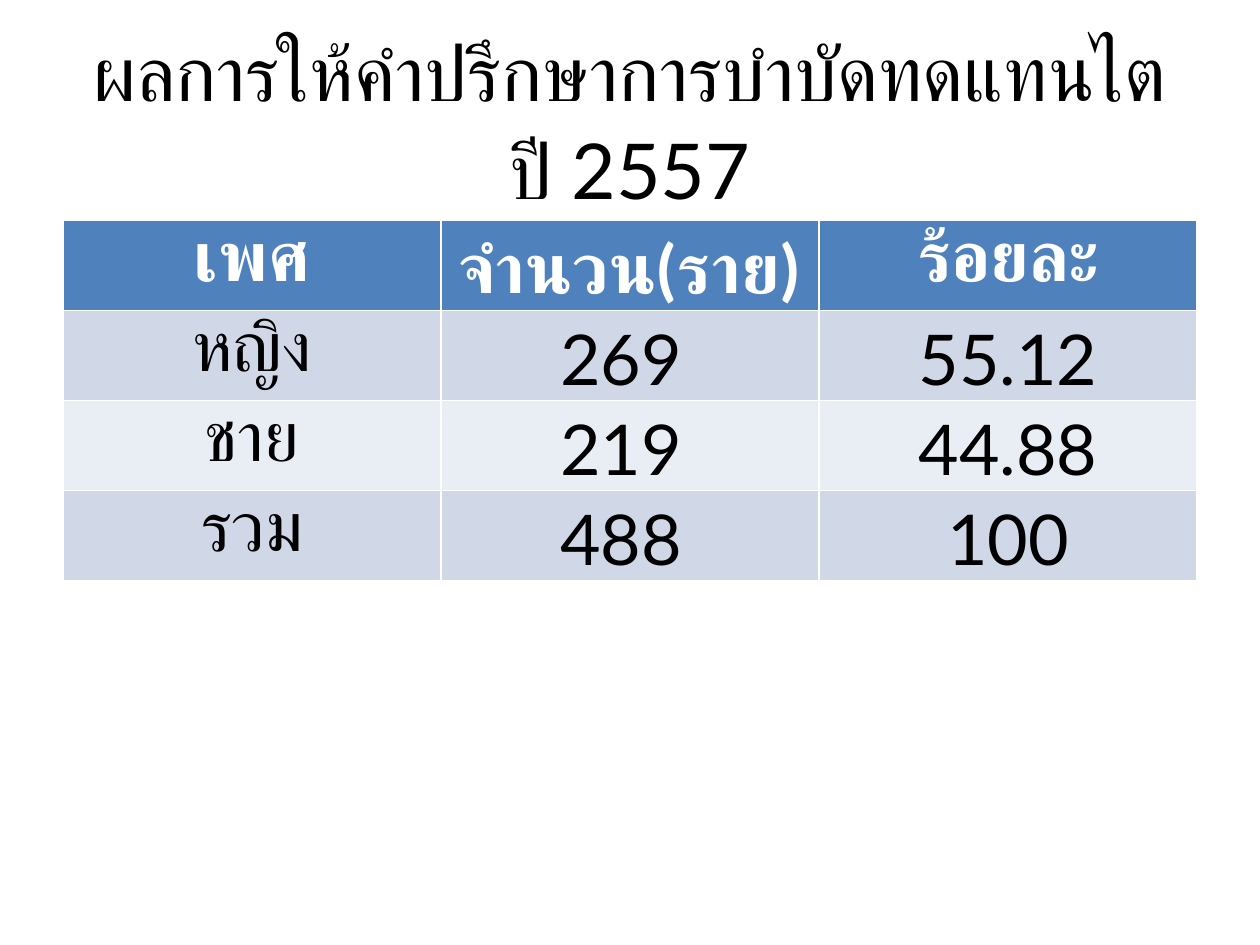
from pptx import Presentation
from pptx.dml.color import RGBColor
from pptx.enum.text import MSO_ANCHOR, PP_ALIGN
from pptx.util import Cm, Pt

# Content
TITLE = [("ผลการให้คำปรึกษาการบำบัดทดแทนไต ปี ", "Calibri"), ("2557", "Lato")]
ROWS = [
    ("เพศ", "จำนวน(ราย)", "ร้อยละ"),
    ("หญิง", "269 ", "55.12"),
    ("ชาย", "219 ", "44.88"),
    ("รวม", "488 ", "100"),
]

# Format
COLORS = {"head": "4F81BD", "odd": "D0D8E8", "even": "E9EDF4",
          "text": "000000", "head_text": "FFFFFF"}
LEFT, WIDTH = Cm(1.27), Cm(22.86)
TITLE_TOP, TITLE_HEIGHT = Cm(0.76), Cm(3.18)
TABLE_TOP, ROW_HEIGHT = Cm(4.45), Cm(1.81)
CELL = {"margin_left": Cm(0.18), "margin_right": Cm(0.18),
        "margin_top": 0, "margin_bottom": 0}


def write(p, runs, size, color, bold=False):
    p.alignment = PP_ALIGN.CENTER
    p.line_spacing = 1.07
    for text, font in runs:
        r = p.add_run()
        r.text = text
        for name, value in {"name": font, "size": Pt(size), "bold": bold}.items():
            setattr(r.font, name, value)
        r.font.color.rgb = RGBColor.from_string(COLORS[color])


prs = Presentation()
prs.slide_width, prs.slide_height = Cm(25.4), Cm(19.05)
s = prs.slides.add_slide(prs.slide_layouts[6])

# Title
tf = s.shapes.add_textbox(LEFT, TITLE_TOP, WIDTH, TITLE_HEIGHT).text_frame
tf.word_wrap = True
tf.vertical_anchor = MSO_ANCHOR.MIDDLE
p = tf.paragraphs[0]
p.space_after = Pt(8)
write(p, TITLE, 44, "text")

# Table: the default style draws the white borders
table = s.shapes.add_table(len(ROWS), len(ROWS[0]), LEFT, TABLE_TOP, WIDTH,
                           ROW_HEIGHT * len(ROWS)).table
for i, row in enumerate(ROWS):
    head = i == 0
    fill = "head" if head else "odd" if i % 2 else "even"
    for j, text in enumerate(row):
        cell = table.cell(i, j)
        for name, value in CELL.items():
            setattr(cell, name, value)
        cell.fill.solid()
        cell.fill.fore_color.rgb = RGBColor.from_string(COLORS[fill])
        font = "Calibri" if head or j == 0 else "Lato"
        write(cell.text_frame.paragraphs[0], [(text, font)], 40,
              "head_text" if head else "text", head)

prs.save("out.pptx")
